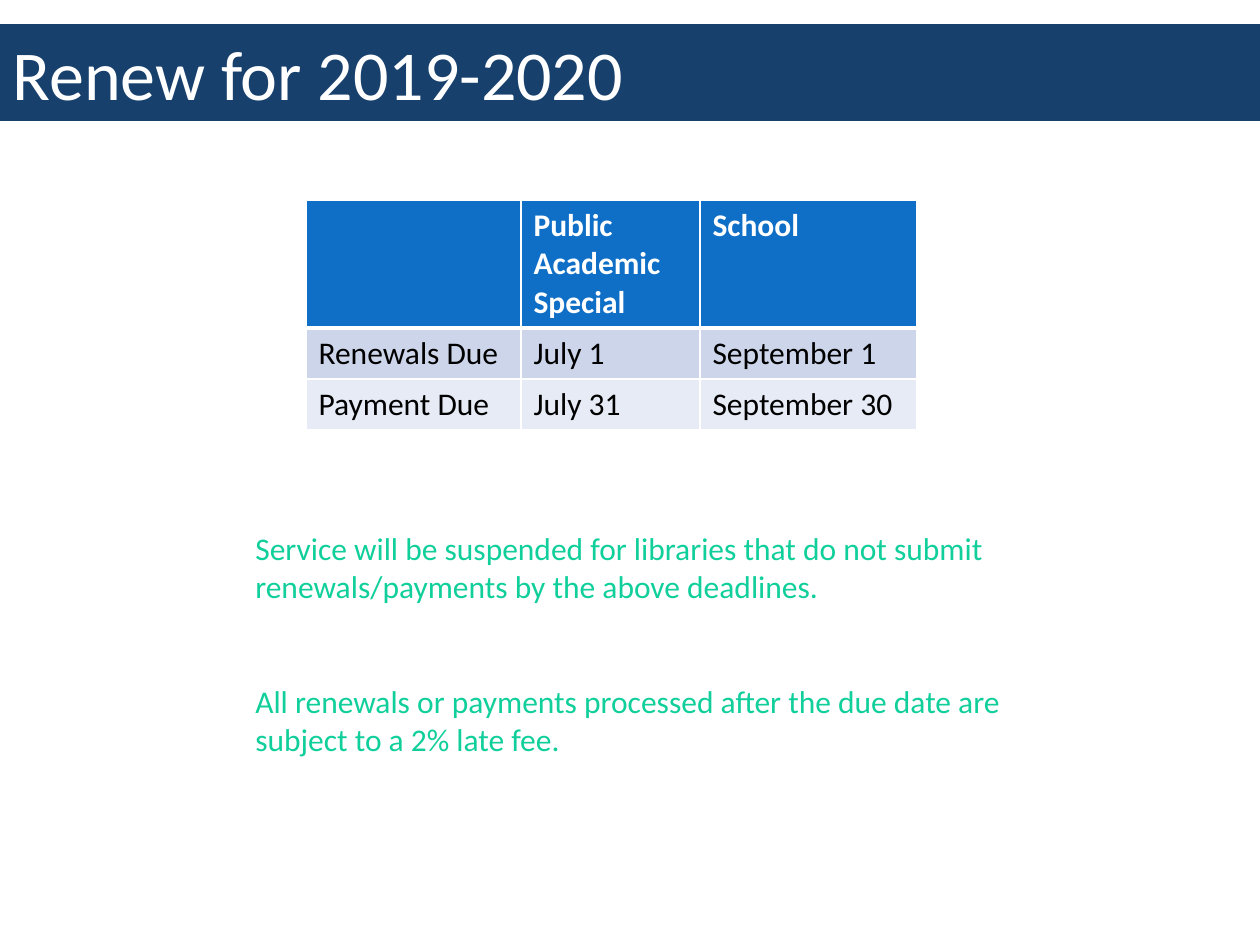
from lxml import etree
from pptx import Presentation
from pptx import util as u
from pptx.dml.color import RGBColor
from pptx.enum import text
from pptx.oxml.ns import qn

PX = 914400 // 126
FONT = "Calibri"
WHITE, BLACK = "FFFFFF", "000000"
NAVY, BLUE, GREEN = "17406D", "0F6FC6", "10CF9B"
BANDS = ["CCD5EA", "E7EBF5"]

COLUMN_WIDTHS = [215, 179, 217]
ROW_HEIGHTS = [125, 51, 51]
DEADLINES = [
    [[], ["Public", "Academic", "Special"], ["School"]],
    [["Renewals Due"], ["July 1"], ["September 1"]],
    [["Payment Due"], ["July 31"], ["September 30"]],
]
NOTES = [
    "Service will be suspended for libraries that do not submit "
    "renewals/payments by the above deadlines.",
    "All renewals or payments processed after the due date are "
    "subject to a 2% late fee.",
]


def px(*lengths):
    return [length * PX for length in lengths]


def paint(fill, color):
    fill.solid()
    fill.fore_color.rgb = RGBColor.from_string(color)


def write(frame, lines, size, color, bold=False, gap=0):
    """Write each line as a paragraph, with gap points between them."""
    for index, line in enumerate(lines):
        paragraph = frame.add_paragraph() if index else frame.paragraphs[0]
        paragraph.alignment = text.PP_ALIGN.LEFT
        paragraph.space_before = u.Pt(gap if index else 0)
        run = paragraph.add_run()
        run.text = line
        run.font.name, run.font.size, run.font.bold = FONT, u.Pt(size), bold
        run.font.color.rgb = RGBColor.from_string(color)


def add_title(slide, title):
    shape = slide.shapes.title
    shape.left, shape.top, shape.width, shape.height = px(0, 24, 1260, 97)
    paint(shape.fill, NAVY)
    frame = shape.text_frame
    frame.auto_size = text.MSO_AUTO_SIZE.NONE
    frame.vertical_anchor = text.MSO_ANCHOR.MIDDLE
    write(frame, [title], 40, WHITE)


def set_borders(cell, bottom):
    properties = cell._tc.get_or_add_tcPr()
    for side, width in (("L", 1), ("R", 1), ("T", 1), ("B", bottom)):
        line = etree.SubElement(properties, qn(f"a:ln{side}"), w=str(u.Pt(width)))
        fill = etree.SubElement(line, qn("a:solidFill"))
        etree.SubElement(fill, qn("a:srgbClr"), val=WHITE)


def add_deadlines(slide):
    table = slide.shapes.add_table(
        len(ROW_HEIGHTS), len(COLUMN_WIDTHS),
        *px(306, 200, sum(COLUMN_WIDTHS), sum(ROW_HEIGHTS))).table
    for column, width in zip(table.columns, px(*COLUMN_WIDTHS)):
        column.width = width
    for row, height in zip(table.rows, px(*ROW_HEIGHTS)):
        row.height = height
    for i, row in enumerate(DEADLINES):
        header = i == 0
        for j, lines in enumerate(row):
            cell = table.cell(i, j)
            set_borders(cell, 3 if header else 1)
            paint(cell.fill, BLUE if header else BANDS[(i - 1) % 2])
            write(cell.text_frame, lines, 18, WHITE if header else BLACK, header)


def add_notes(slide):
    frame = slide.shapes.add_textbox(*px(243, 523, 819, 242)).text_frame
    frame.word_wrap = True
    write(frame, NOTES, 18, GREEN, gap=44)


def main():
    presentation = Presentation()
    presentation.slide_width, presentation.slide_height = u.Inches(10), u.Inches(7.5)
    slide = presentation.slides.add_slide(presentation.slide_layouts[5])
    # Heading band
    add_title(slide, "Renew for 2019-2020")
    # Due dates by library type
    add_deadlines(slide)
    # Consequences of missing them
    add_notes(slide)
    presentation.save("out.pptx")


if __name__ == "__main__":
    main()
